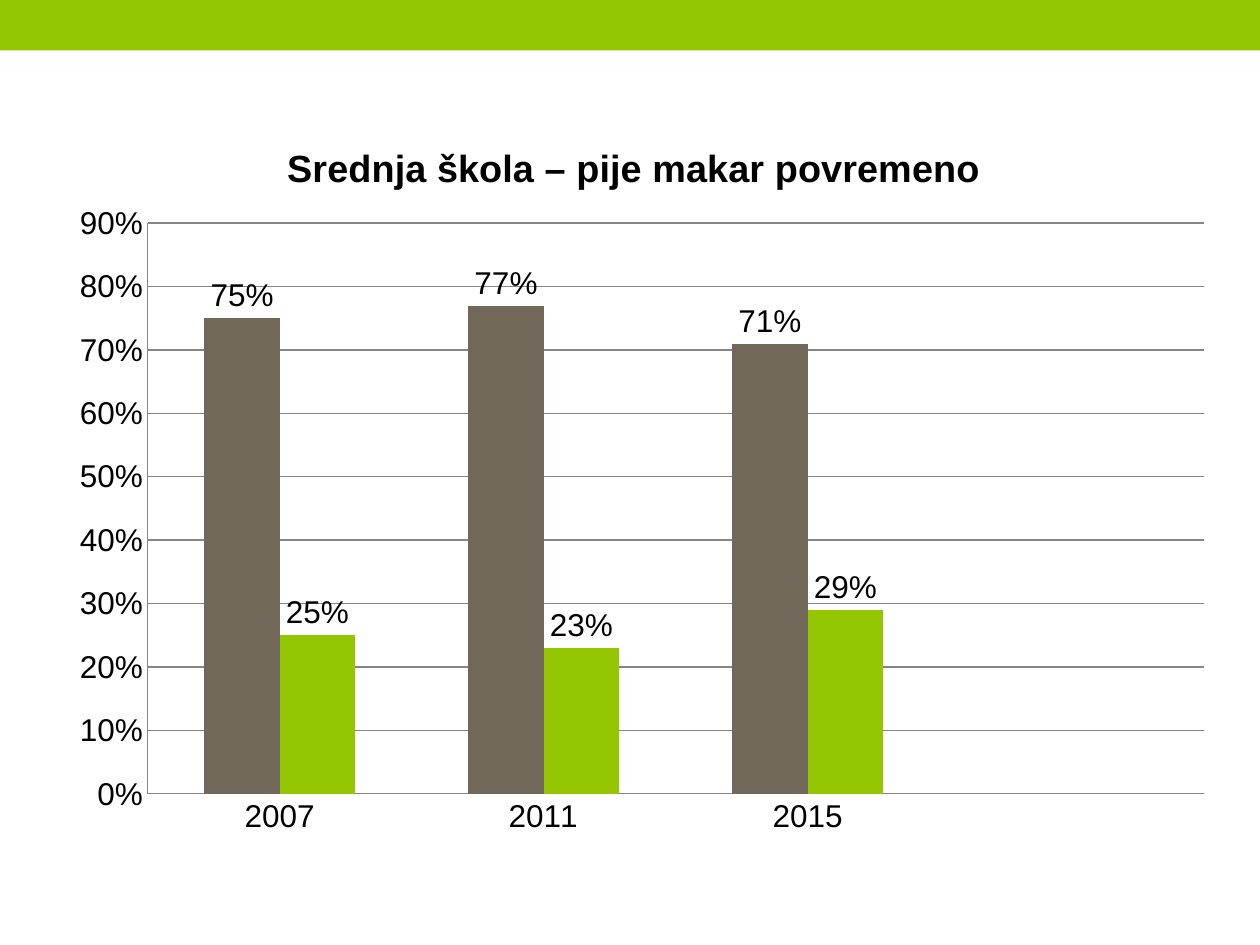
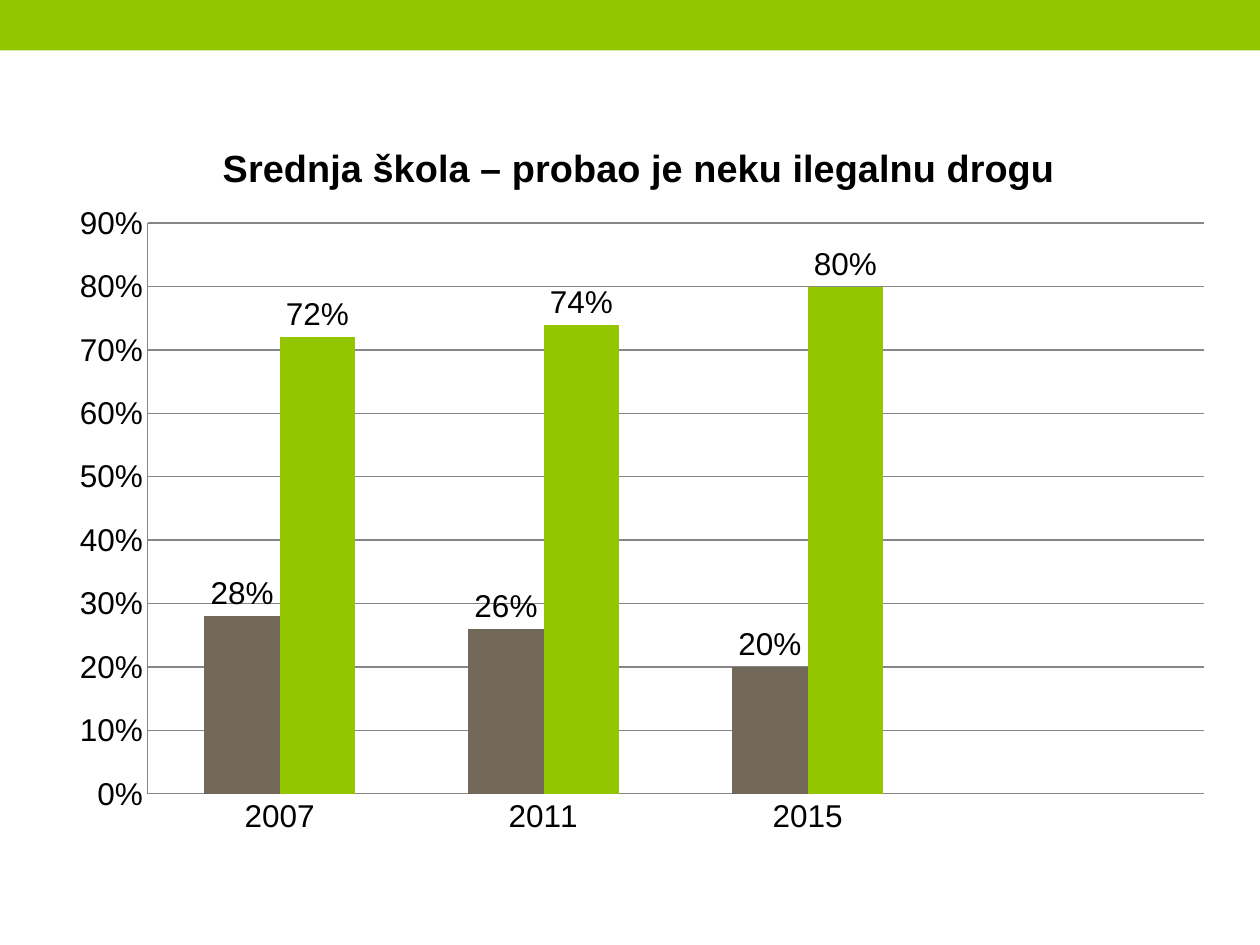
from lxml import etree
from pptx import Presentation
from pptx.chart.data import CategoryChartData
from pptx.dml.color import RGBColor
from pptx.enum.chart import XL_CHART_TYPE, XL_LABEL_POSITION, XL_TICK_MARK
from pptx.enum.shapes import MSO_SHAPE
from pptx.oxml.ns import qn
from pptx.util import Inches, Pt

COLUMNS = XL_CHART_TYPE.COLUMN_CLUSTERED
OUTSIDE = XL_LABEL_POSITION.OUTSIDE_END
NO_TICK = XL_TICK_MARK.NONE
RECT = MSO_SHAPE.RECTANGLE

FONT = "Arial"
GREEN, BROWN, GRAY, BLACK = "94C600", "71685A", "868686", "000000"
YEARS = ["2007", "2011", "2015", ""]
PLOT_AREA = {"x": 0.08, "y": 0.146, "w": 0.902, "h": 0.777}

SLIDES = [
    ("Srednja škola – pije makar povremeno ",
     [("pije", [0.75, 0.77, 0.71, None]),
      ("ne pije", [0.25, 0.23, 0.29, None])]),
    ("Srednja škola – probao je neku ilegalnu drogu",
     [("probao je", [0.28, 0.26, 0.2, None]),
      ("nije probao", [0.72, 0.74, 0.8, None])]),
]


def rgb(color):
    return RGBColor.from_string(color)


def place_plot(chart):
    plot_area = chart._chartSpace.chart.plotArea
    for old in plot_area.findall(qn("c:layout")):
        plot_area.remove(old)
    layout = etree.Element(qn("c:layout"))
    manual = etree.SubElement(layout, qn("c:manualLayout"))
    settings = {"layoutTarget": "inner", "xMode": "edge", "yMode": "edge", **PLOT_AREA}
    for tag, value in settings.items():
        etree.SubElement(manual, qn("c:" + tag)).set("val", str(value))
    plot_area.insert(0, layout)


prs = Presentation()
prs.slide_width, prs.slide_height = Inches(10), Inches(7.5)

for title, series in SLIDES:
    s = prs.slides.add_slide(prs.slide_layouts[6])
    band = s.shapes.add_shape(RECT, 0, 0, prs.slide_width, Inches(0.4))
    band.shadow.inherit = False
    band.fill.solid()
    band.fill.fore_color.rgb = rgb(GREEN)
    band.line.fill.background()

    data = CategoryChartData(number_format="0%")
    data.categories = YEARS
    for name, values in series:
        data.add_series(name, values)
    chart = s.shapes.add_chart(COLUMNS, Inches(0.43), Inches(0.92),
                               Inches(9.29), Inches(5.83), data).chart
    chart.font.name = FONT
    chart.font.size = Pt(18)
    chart.font.color.rgb = rgb(BLACK)
    chart.has_legend = False
    place_plot(chart)

    chart.has_title = True
    chart.chart_title.include_in_layout = False
    r = chart.chart_title.text_frame.paragraphs[0].add_run()
    r.text = title
    r.font.name = FONT
    r.font.size = Pt(21.6)
    r.font.bold = True
    r.font.color.rgb = rgb(BLACK)

    for axis in (chart.category_axis, chart.value_axis):
        axis.major_tick_mark = NO_TICK
        axis.minor_tick_mark = NO_TICK
        axis.format.line.color.rgb = rgb(GRAY)
    axis = chart.value_axis
    axis.minimum_scale, axis.maximum_scale, axis.major_unit = 0, 0.9, 0.1
    axis.has_major_gridlines = True
    axis.major_gridlines.format.line.color.rgb = rgb(GRAY)
    axis.tick_labels.number_format = "0%"
    axis.tick_labels.number_format_is_linked = False

    plot = chart.plots[0]
    plot.gap_width = 150
    plot.overlap = 0
    plot.vary_by_categories = False
    for bars, color in zip(plot.series, (BROWN, GREEN)):
        bars.format.fill.solid()
        bars.format.fill.fore_color.rgb = rgb(color)
        bars.invert_if_negative = False
        labels = bars.data_labels
        labels.show_value = True
        labels.position = OUTSIDE
        labels.number_format = "0%"
        labels.number_format_is_linked = False

prs.save("out.pptx")
